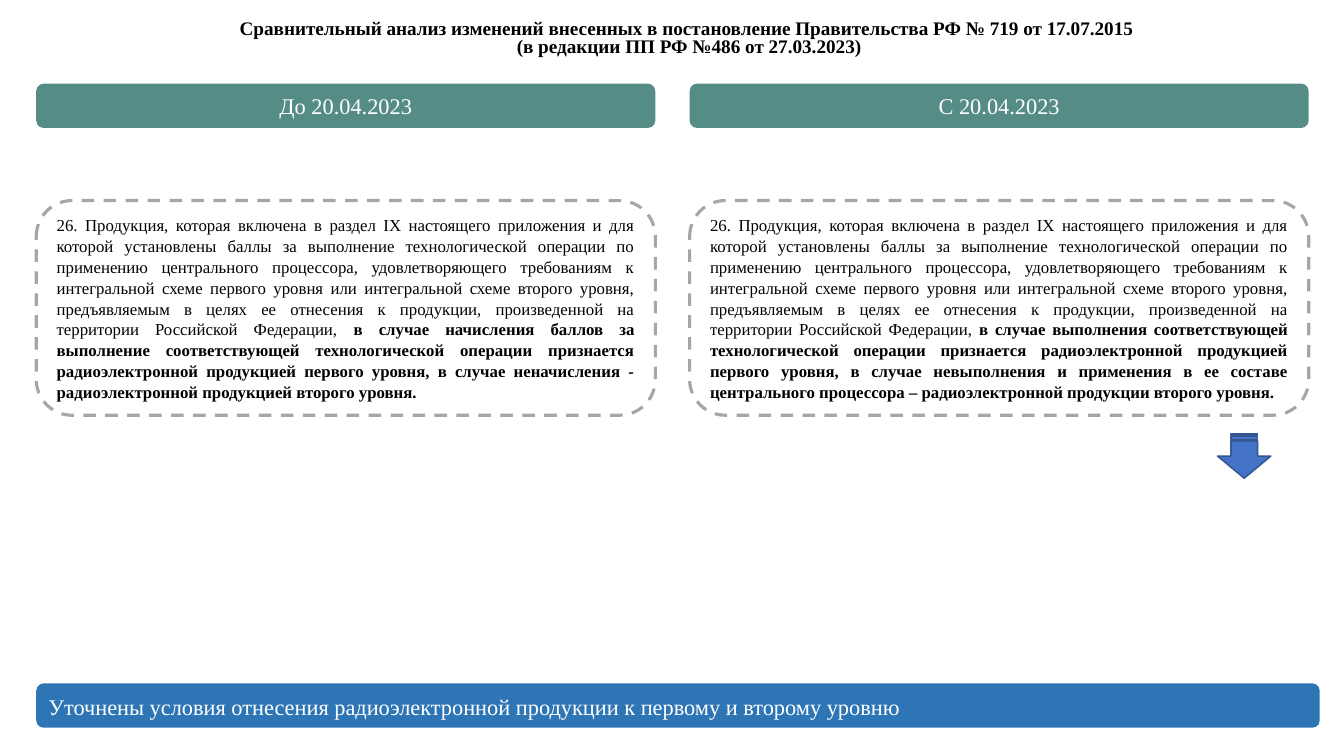
import pptx
import pptx.dml.color
import pptx.enum.dml
import pptx.enum.shapes
import pptx.enum.text
import pptx.util

Inches = pptx.util.Inches
Pt = pptx.util.Pt
Align = pptx.enum.text.PP_ALIGN
Anchor = pptx.enum.text.MSO_ANCHOR
Shape = pptx.enum.shapes.MSO_SHAPE

FONT = "Times New Roman"
TITLE = [
    "Сравнительный анализ изменений внесенных в постановление Правительства РФ № 719 от 17.07.2015 ",
    "(в редакции ПП РФ №486 от 27.03.2023)",
]
COMMON = (
    "26. Продукция, которая включена в раздел IX настоящего приложения и для которой "
    "установлены баллы за выполнение технологической операции по применению центрального "
    "процессора, удовлетворяющего требованиям к интегральной схеме первого уровня или "
    "интегральной схеме второго уровня, предъявляемым в целях ее отнесения к продукции, "
    "произведенной на территории Российской Федерации, "
)
VERSIONS = [
    ("До 20.04.2023",
     "в случае начисления баллов за выполнение соответствующей технологической операции "
     "признается радиоэлектронной продукцией первого уровня, в случае неначисления - "
     "радиоэлектронной продукцией второго уровня."),
    ("С 20.04.2023",
     "в случае выполнения соответствующей технологической операции признается "
     "радиоэлектронной продукцией первого уровня, в случае невыполнения и применения в ее "
     "составе центрального процессора – радиоэлектронной продукции второго уровня."),
]
SUMMARY = "Уточнены условия отнесения радиоэлектронной продукции к первому и второму уровню"

LEFT, COLUMN_WIDTH, COLUMN_STEP = 0.36, 6.14, 6.48
BAR_HEIGHT = 0.44


def color(value):
    return pptx.dml.color.RGBColor.from_string(value)


def add_box(page, kind, left, top, width, height, fill=None, line=None, weight=1):
    box = page.shapes.add_shape(kind, Inches(left), Inches(top), Inches(width), Inches(height))
    box.shadow.inherit = False
    if fill:
        box.fill.solid()
        box.fill.fore_color.rgb = color(fill)
    else:
        box.fill.background()
    if line:
        box.line.color.rgb = color(line)
        box.line.width = Pt(weight)
    else:
        box.line.fill.background()
    return box


def write(box, paragraphs, size, ink, align, spacing=1.0, anchor=Anchor.MIDDLE):
    """Fill a shape with paragraphs, each a list of (text, bold) spans."""
    frame = box.text_frame
    frame.word_wrap = True
    frame.auto_size = pptx.enum.text.MSO_AUTO_SIZE.NONE
    frame.vertical_anchor = anchor
    for index, spans in enumerate(paragraphs):
        para = frame.add_paragraph() if index else frame.paragraphs[0]
        para.alignment = align
        para.line_spacing = spacing
        para.space_before = Pt(0)
        para.font.name = FONT
        para.font.size = Pt(size)
        para.font.color.rgb = color(ink)
        for text, bold in spans:
            span = para.add_run()
            span.text = text
            span.font.bold = bold


def add_bar(page, top, left, width, text, fill, align, spacing=1.0):
    bar = add_box(page, Shape.ROUNDED_RECTANGLE, left, top, width, BAR_HEIGHT, fill)
    write(bar, [[(text, False)]], 16, "FFFFFF", align, spacing)


def main():
    deck = pptx.Presentation()
    deck.slide_width, deck.slide_height = Inches(13.33), Inches(7.5)
    page = deck.slides.add_slide(deck.slide_layouts[5])

    title = page.shapes.title
    title.left, title.top = Inches(0.5), Inches(0.11)
    title.width, title.height = Inches(12.67), Inches(0.51)
    write(title, [[(line, True)] for line in TITLE], 13.7, "000000",
          Align.CENTER, 0.8, Anchor.BOTTOM)

    for column, (date, change) in enumerate(VERSIONS):
        left = LEFT + column * COLUMN_STEP
        add_bar(page, 0.83, left, COLUMN_WIDTH, date, "568C86", Align.CENTER)
        clause = add_box(page, Shape.ROUNDED_RECTANGLE, left, 1.99, COLUMN_WIDTH, 2.13,
                         line="A6A6A6", weight=2.25)
        clause.line.dash_style = pptx.enum.dml.MSO_LINE.DASH
        write(clause, [[(COMMON, False), (change, True)]], 12, "000000", Align.JUSTIFY, 1.04)

    arrow = add_box(page, Shape.STRIPED_RIGHT_ARROW, 12.12, 4.26, 0.44, 0.53,
                    "4472C4", "325491")
    arrow.rotation = 90

    add_bar(page, 6.78, LEFT, 12.73, SUMMARY, "2E75B6", Align.JUSTIFY, 1.07)
    deck.save("out.pptx")


if __name__ == "__main__":
    main()
